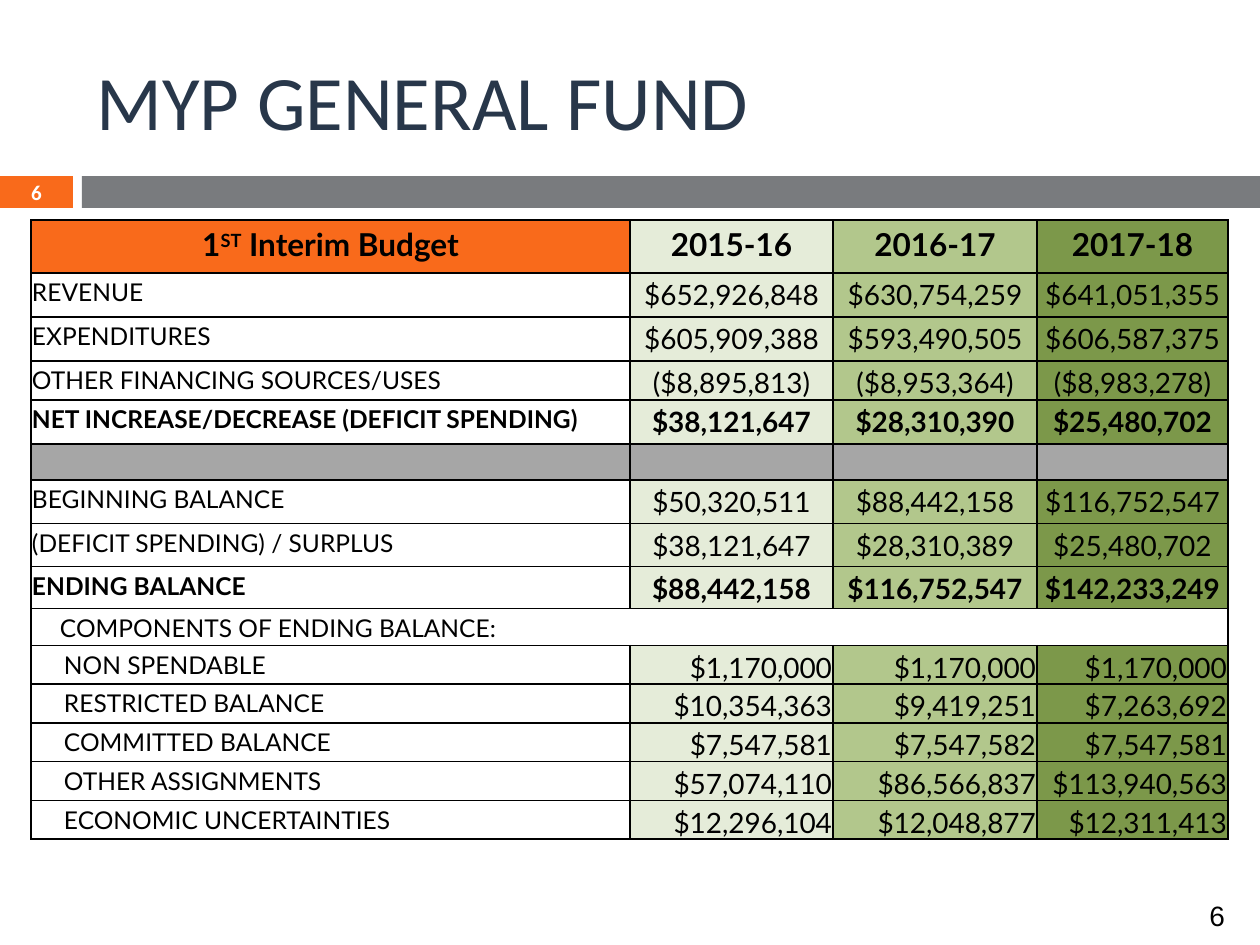
from dataclasses import dataclass

from lxml import etree
from pptx import Presentation
from pptx.dml.color import RGBColor
from pptx.enum.shapes import MSO_SHAPE
from pptx.enum.text import MSO_ANCHOR, MSO_AUTO_SIZE, PP_ALIGN
from pptx.oxml.ns import qn
from pptx.util import Pt

LEFT, MID, RIGHT = PP_ALIGN.LEFT, PP_ALIGN.CENTER, PP_ALIGN.RIGHT
CENTRE = MSO_ANCHOR.MIDDLE
RECT = MSO_SHAPE.RECTANGLE
FIXED = MSO_AUTO_SIZE.NONE
SCALE = 914400 / 126  # EMU in one px


@dataclass(frozen=True)
class Theme:
    head: str = "Calibri"
    body: str = "Lato"
    plain: str = "Arial"
    navy: str = "28374A"
    orange: str = "F96A1B"
    slate: str = "797B7E"
    grey: str = "A6A6A6"
    black: str = "000000"
    white: str = "FFFFFF"
    years: tuple = ("E5ECD9", "B2C78C", "7C984A")
    title: float = 44
    top: float = 18
    value: float = 16
    label: float = 14
    badge: float = 12


def emu(*px):
    return [round(n * SCALE) for n in px]


class Deck:
    def __init__(self, theme):
        self.theme = theme
        self.prs = Presentation()
        self.prs.slide_width, self.prs.slide_height = emu(1260, 945)
        self.slide = self.prs.slides.add_slide(self.prs.slide_layouts[5])

    def run(self, para, text, size, color, font, bold=False, sup=False):
        run = para.add_run()
        run.text = text
        run.font.size = Pt(size)
        run.font.name = font
        run.font.bold = bold
        run.font.color.rgb = RGBColor.from_string(color)
        if sup:
            run._r.get_or_add_rPr().set("baseline", "30000")

    def title(self, text, *box):
        shape = self.slide.shapes.title
        shape.left, shape.top, shape.width, shape.height = emu(*box)
        frame = shape.text_frame
        frame.auto_size = FIXED
        frame.vertical_anchor = CENTRE
        para = frame.paragraphs[0]
        para.alignment = LEFT
        self.run(para, text, self.theme.title, self.theme.navy, self.theme.head)

    def bar(self, color, *box):
        shape = self.slide.shapes.add_shape(RECT, *emu(*box))
        shape.shadow.inherit = False
        shape.fill.solid()
        shape.fill.fore_color.rgb = RGBColor.from_string(color)
        shape.line.fill.background()

    def text(self, text, size, color, font, *box, align=LEFT, bold=False):
        frame = self.slide.shapes.add_textbox(*emu(*box)).text_frame
        frame.word_wrap = True
        frame.vertical_anchor = CENTRE
        para = frame.paragraphs[0]
        para.alignment = align
        self.run(para, text, size, color, font, bold)

    def table(self, x, y, cols, rows):
        box = emu(x, y, sum(cols), sum(rows))
        table = self.slide.shapes.add_table(len(rows), len(cols), *box).table
        table.first_row = table.horz_banding = False
        for col, width in zip(table.columns, emu(*cols)):
            col.width = width
        for row, height in zip(table.rows, emu(*rows)):
            row.height = height
        return table

    def cell(self, cell, parts, size, align=LEFT, fill=None, bold=False, indent=0):
        cell.margin_left, cell.margin_right = emu(1, 1)
        cell.margin_top = cell.margin_bottom = 0
        self.edges(cell)
        if fill:
            cell.fill.solid()
            cell.fill.fore_color.rgb = RGBColor.from_string(fill)
        else:
            cell.fill.background()
        para = cell.text_frame.paragraphs[0]
        para.alignment = align
        para.line_spacing = 1.15
        para._p.get_or_add_pPr().set("marL", str(emu(indent)[0]))
        for text, sup in parts:
            self.run(para, text, size, self.theme.black, self.theme.body, bold, sup)
        if not parts:
            etree.SubElement(para._p, qn("a:endParaRPr"), sz=str(size * 100))

    def edges(self, cell):
        props = cell._tc.get_or_add_tcPr()
        for side in ("lnL", "lnR", "lnT", "lnB"):
            line = etree.SubElement(props, qn("a:" + side), w=str(Pt(1)))
            fill = etree.SubElement(line, qn("a:solidFill"))
            etree.SubElement(fill, qn("a:srgbClr"), val=self.theme.black)


# Column and row sizes in px
COLS = (599, 203, 204, 191)
ROWS = (53, 44, 44, 39, 44, 36, 44, 43, 42, 37, 38, 39, 38, 39, 38)

HEAD = ((("1", False), ("ST", True), (" Interim Budget", False)),
        "2015-16", "2016-17", "2017-18")
FLOWS = (
    ("REVENUE", "$652,926,848", "$630,754,259", "$641,051,355"),
    ("EXPENDITURES", "$605,909,388", "$593,490,505", "$606,587,375"),
    ("OTHER FINANCING SOURCES/USES", "($8,895,813)", "($8,953,364)", "($8,983,278)"),
    ("NET INCREASE/DECREASE (DEFICIT SPENDING)",
     "$38,121,647", "$28,310,390", "$25,480,702"),
)
FUNDS = (
    ("BEGINNING BALANCE", "$50,320,511", "$88,442,158", "$116,752,547"),
    ("(DEFICIT SPENDING) / SURPLUS", "$38,121,647", "$28,310,389", "$25,480,702"),
    ("ENDING BALANCE", "$88,442,158", "$116,752,547", "$142,233,249"),
)
PARTS = (
    ("NON SPENDABLE", "$1,170,000", "$1,170,000", "$1,170,000"),
    ("RESTRICTED BALANCE", "$10,354,363", "$9,419,251", "$7,263,692"),
    ("COMMITTED BALANCE", "$7,547,581", "$7,547,582", "$7,547,581"),
    ("OTHER ASSIGNMENTS", "$57,074,110", "$86,566,837", "$113,940,563"),
    ("ECONOMIC UNCERTAINTIES", "$12,296,104", "$12,048,877", "$12,311,413"),
)


def budget(deck):
    look = deck.theme
    table = deck.table(31, 220, COLS, ROWS)

    # Header row
    deck.cell(table.cell(0, 0), HEAD[0], look.top, MID, look.orange, True)
    for col, (year, fill) in enumerate(zip(HEAD[1:], look.years), 1):
        deck.cell(table.cell(0, col), [(year, False)], look.top, MID, fill, True)

    # Blocks of figures; the last row of a totalled block is bold
    for start, block, align, indent, total in (
            (1, FLOWS, MID, 0, True), (6, FUNDS, MID, 0, True),
            (10, PARTS, RIGHT, 32, False)):
        for row, (name, *sums) in enumerate(block, start):
            bold = total and row == start + len(block) - 1
            deck.cell(table.cell(row, 0), [(name, False)], look.label,
                      bold=bold, indent=indent)
            for col, (value, fill) in enumerate(zip(sums, look.years), 1):
                deck.cell(table.cell(row, col), [(value, False)], look.value,
                          align, fill, bold)

    # Grey spacer row and merged subheading
    for col in range(len(COLS)):
        deck.cell(table.cell(5, col), [], look.label, fill=look.grey)
        note = [("COMPONENTS OF ENDING BALANCE:", False)] if col == 0 else []
        deck.cell(table.cell(9, col), note, look.label, indent=28)
    table.cell(9, 0).merge(table.cell(9, len(COLS) - 1))


def main():
    look = Theme()
    deck = Deck(look)

    # Title and band
    deck.bar(look.orange, 0, 176, 73, 32)
    deck.bar(look.slate, 82, 176, 1178, 32)
    deck.title("MYP GENERAL FUND", 84, 32, 1124, 136)

    budget(deck)

    # Page numbers
    deck.text("6", look.badge, look.white, look.head, 0, 175, 73, 34,
              align=MID, bold=True)
    deck.text("6", look.value, look.black, look.plain, 1197, 892, 53, 47)
    deck.prs.save("out.pptx")


if __name__ == "__main__":
    main()
